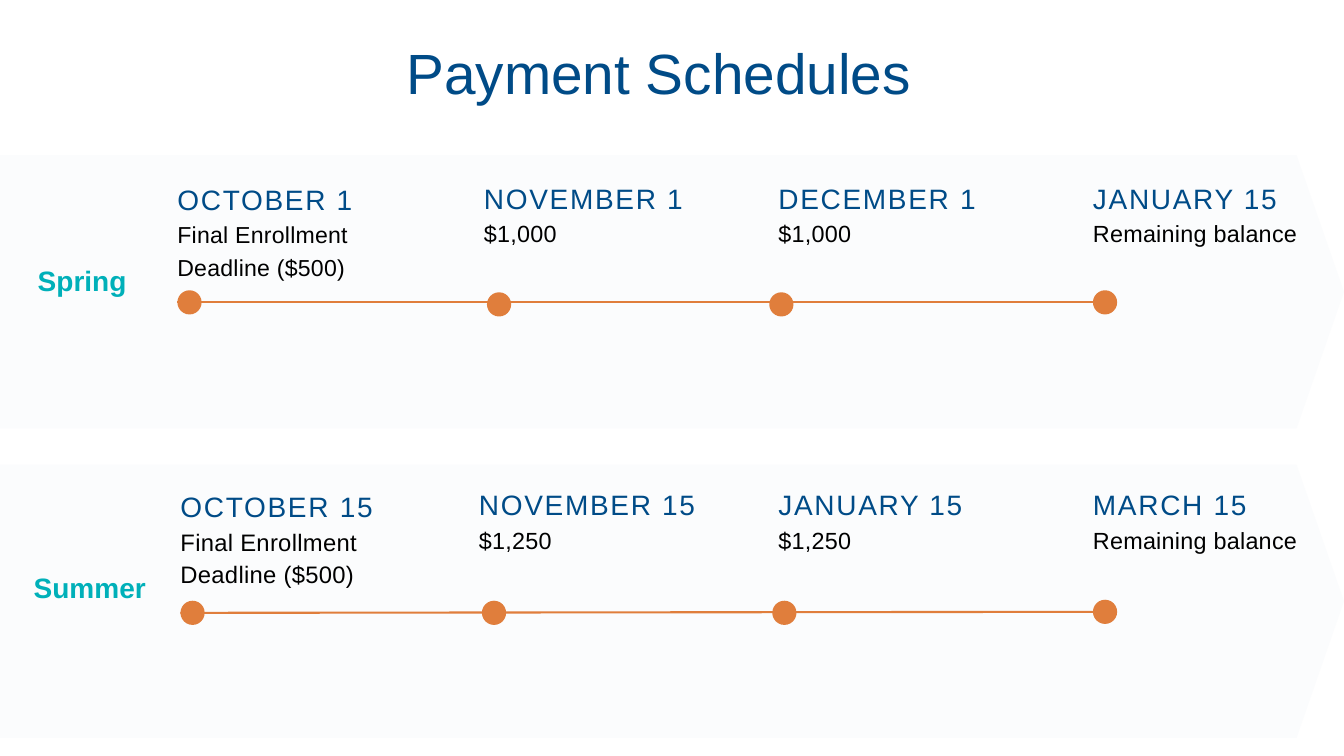
from collections import namedtuple

from lxml.etree import SubElement
from pptx import Presentation
from pptx.dml.color import RGBColor
from pptx.enum.shapes import MSO_CONNECTOR, MSO_SHAPE
from pptx.enum.text import MSO_ANCHOR, PP_ALIGN
from pptx.oxml.ns import qn
from pptx.util import Inches, Pt

COLORS = {"band": "FBFCFD", "marker": "E07E3C", "heading": "004B87",
          "term": "00B0B9", "detail": "000000"}
SLIDE_W, SLIDE_H = 13.33, 7.5
BAND_H, BAND_TIP = 2.71, 0.47
DOT = 0.24
DETAIL_DROP = 0.36  # from the date down to its detail
TERM_DROP = 0.79    # from the date down to the term name

# Lengths in inches; dot_y is the dot's top inside its band, dy lowers the date
Milestone = namedtuple("Milestone", "x dot_x dot_y date detail dy size",
                       defaults=(0, 16.7))
DEADLINE = "Final Enrollment\nDeadline ($500)"
SPRING = [
    Milestone(1.76, 1.76, 1.34, "OCTOBER 1", DEADLINE, 0.01, 16.5),
    Milestone(4.8, 4.83, 1.36, "NOVEMBER 1", "$1,000"),
    Milestone(7.72, 7.63, 1.36, "DECEMBER 1", "$1,000"),
    Milestone(10.84, 10.84, 1.34, "JANUARY 15", "Remaining balance"),
]
SUMMER = [
    Milestone(1.79, 1.79, 1.35, "OCTOBER 15", DEADLINE, 0.02, 17),
    Milestone(4.75, 4.78, 1.35, "NOVEMBER 15", "$1,250"),
    Milestone(7.72, 7.66, 1.35, "JANUARY 15", "$1,250"),
    Milestone(10.84, 10.84, 1.34, "MARCH 15", "Remaining balance"),
]


def color(name):
    return RGBColor.from_string(COLORS[name])


def write(holder, text, *, size, ink, leading, bold=False, tracking=0,
          align=PP_ALIGN.LEFT):
    frame = holder.text_frame
    frame.word_wrap = True
    frame.vertical_anchor = MSO_ANCHOR.TOP
    frame.margin_left = frame.margin_right = 0
    frame.margin_top = frame.margin_bottom = 0
    frame.text = text
    for paragraph in frame.paragraphs:
        paragraph.alignment = align
        paragraph.line_spacing = Pt(leading)
        paragraph.space_before = Pt(0)
        for run in paragraph.runs:
            font = run.font
            font.name, font.size, font.bold = "Arial", Pt(size), bold
            font.color.rgb = color(ink)
            if tracking:
                run._r.get_or_add_rPr().set("spc", str(round(tracking * 100)))


def add_text(slide, box, text, **style):
    write(slide.shapes.add_textbox(*map(Inches, box)), text, **style)


def add_filled(slide, preset, box, fill):
    shape = slide.shapes.add_shape(preset, *map(Inches, box))
    shape.shadow.inherit = False
    shape.fill.solid()
    shape.fill.fore_color.rgb = color(fill)
    shape.line.fill.background()
    return shape


def add_title(slide, box, text):
    title = slide.shapes.title
    title.left, title.top, title.width, title.height = map(Inches, box)
    write(title, text, size=40.5, ink="heading", leading=48.8,
          align=PP_ALIGN.CENTER)


def add_timeline(slide, top, milestones):
    first, last = milestones[0], milestones[-1]
    track = slide.shapes.add_connector(
        MSO_CONNECTOR.STRAIGHT,
        Inches(first.dot_x), Inches(top + first.dot_y + DOT / 2),
        Inches(last.dot_x), Inches(top + last.dot_y + DOT / 2))
    track.line.color.rgb = color("marker")
    track.line.width = Pt(1.5)
    SubElement(track._element.spPr, qn("a:effectLst"))
    for stop in milestones:
        add_filled(slide, MSO_SHAPE.OVAL,
                   (stop.dot_x, top + stop.dot_y, DOT, DOT), "marker")


def add_schedule(slide, box, term, term_box, text_top, milestones):
    left, top, width, height = box
    band = add_filled(slide, MSO_SHAPE.PENTAGON, box, "band")
    band.adjustments[0] = BAND_TIP / height
    add_timeline(slide, top, milestones)

    # Term name
    term_left, term_width = term_box
    dates_top = top + text_top
    add_text(slide, (left + term_left, dates_top + TERM_DROP, term_width, 0.36),
             term, size=20, ink="term", leading=28, bold=True,
             align=PP_ALIGN.CENTER)

    # Dates and amounts
    for stop in milestones:
        date_top = dates_top + stop.dy
        add_text(slide, (stop.x, date_top, 2.45, 0.34), stop.date,
                 size=20, ink="heading", leading=26, tracking=1.2)
        lines = stop.detail.count("\n") + 1
        add_text(slide, (stop.x, date_top + DETAIL_DROP, 2.2, 0.31 * lines),
                 stop.detail, size=stop.size, ink="detail", leading=23.3,
                 tracking=0.2)


def main():
    deck = Presentation()
    deck.slide_width, deck.slide_height = Inches(SLIDE_W), Inches(SLIDE_H)
    slide = deck.slides.add_slide(deck.slide_layouts[5])
    add_title(slide, (2.51, 0.37, 8.05, 0.65), "Payment Schedules")
    add_schedule(slide, (0, 1.54, SLIDE_W, BAND_H), "Spring", (0.31, 1.01),
                 0.23, SPRING)
    add_schedule(slide, (0, 4.61, SLIDE_W, BAND_H), "Summer", (0.32, 1.14),
                 0.2, SUMMER)
    deck.save("out.pptx")


if __name__ == "__main__":
    main()
